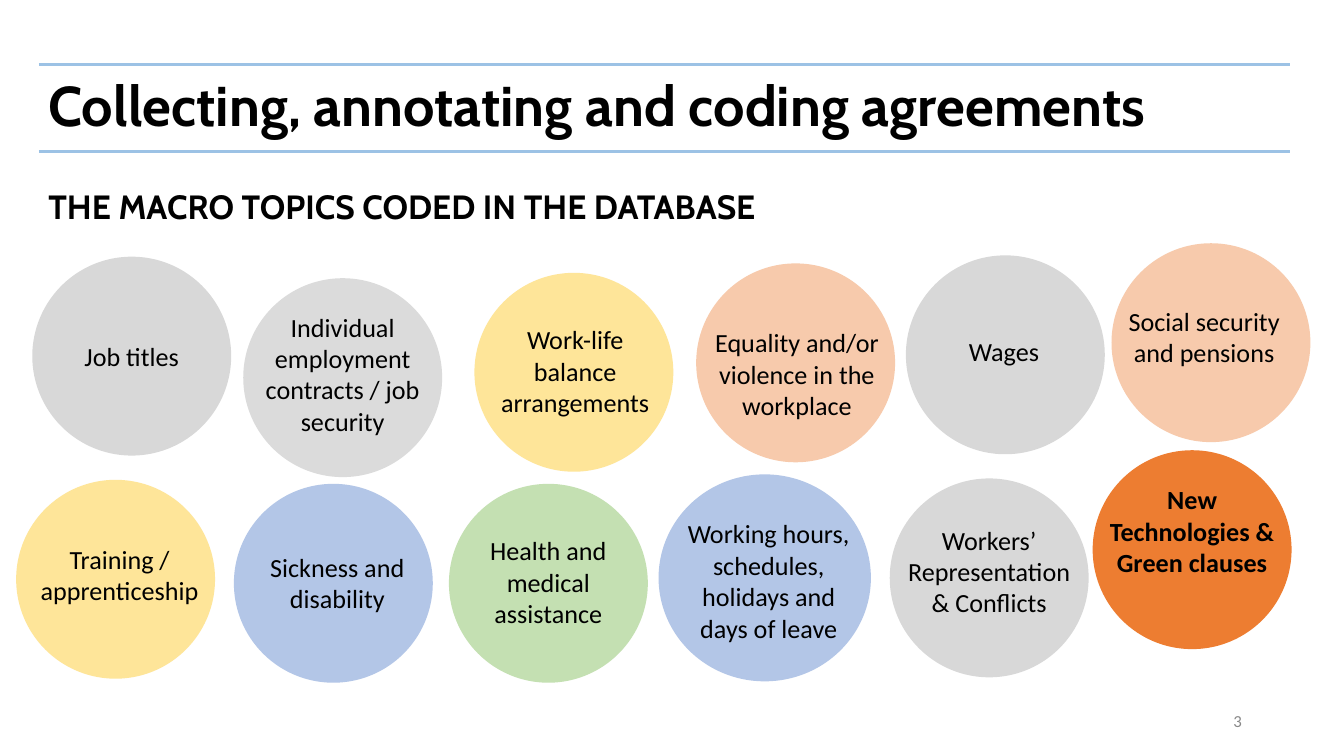
from dataclasses import dataclass

from lxml import etree
from pptx import Presentation
from pptx.dml.color import RGBColor
from pptx.enum.shapes import MSO_CONNECTOR, MSO_SHAPE
from pptx.enum.text import MSO_ANCHOR, MSO_AUTO_SIZE, PP_ALIGN
from pptx.oxml.ns import qn
from pptx.util import Inches, Pt

ELLIPSE = MSO_SHAPE.OVAL
STRAIGHT = MSO_CONNECTOR.STRAIGHT
MIDDLE, TOP = MSO_ANCHOR.MIDDLE, MSO_ANCHOR.TOP
CENTER, RIGHT, LEFT = PP_ALIGN.CENTER, PP_ALIGN.RIGHT, PP_ALIGN.LEFT
FIT_SHAPE, NO_FIT = MSO_AUTO_SIZE.SHAPE_TO_FIT_TEXT, MSO_AUTO_SIZE.NONE

COLORS = {
    "text": "000000",
    "number": "888888",
    "rule": "9CC2E5",
    "gray": "D8D8D8",
    "light gray": "DBDBDB",
    "yellow": "FEE599",
    "peach": "F7CAAC",
    "blue": "B3C6E7",
    "green": "C4E0B2",
    "orange": "ED7D31",
}
MARGIN, CONTENT_WIDTH = 0.29, 9.31
DIAMETER = 1.48
HANGING_INDENT = Inches(0.42)


@dataclass
class Topic:
    """A circle with its label box; without a label box the circle holds the text."""
    text: str
    color: str
    circle: tuple
    label: tuple = None  # left, top, height
    size: tuple = (DIAMETER, DIAMETER)
    bold: bool = False


TOPICS = [
    Topic("Social security and pensions", "peach", (8.27, 1.81), (8.22, 2.24, 0.53)),
    Topic("Training / apprenticeship", "yellow", (0.12, 3.57), (0.15, 4, 0.55)),
    Topic("Individual employment contracts / job security", "light gray",
          (1.81, 2.07), (1.81, 2.29, 0.98)),
    Topic("Sickness and disability", "blue", (1.74, 3.6), (1.77, 4.07, 0.53)),
    Topic("Health and medical assistance", "green", (3.34, 3.6), (3.34, 3.95, 0.76)),
    Topic("Work-life balance arrangements", "yellow", (3.53, 2.03), (3.54, 2.38, 0.76)),
    Topic("Equality and/or violence in the workplace", "peach",
          (5.18, 1.96), (5.19, 2.4, 0.76)),
    Topic("Wages", "gray", (6.74, 1.9), (6.73, 2.46, 0.3)),
    Topic("Working hours, schedules, holidays and days of leave", "blue",
          (4.9, 3.53), (4.98, 3.83, 0.98), size=(1.58, 1.54)),
    Topic("Workers’ Representation & Conflicts", "gray", (6.62, 3.56), (6.62, 3.87, 0.76)),
    Topic("New Technologies & Green clauses", "orange",
          (8.13, 3.35), (8.13, 3.56, 0.78), bold=True),
    Topic("Job titles", "gray", (0.24, 1.91)),
]


def rgb(name):
    return RGBColor.from_string(COLORS[name])


def write(shape, text, size, font="Calibri", color="text", bold=False,
          align=CENTER, anchor=MIDDLE, fit=NO_FIT):
    frame = shape.text_frame
    frame.word_wrap = True
    frame.auto_size = fit
    frame.vertical_anchor = anchor
    frame.margin_left = frame.margin_right = Inches(0.07)
    frame.margin_top = frame.margin_bottom = Inches(0.04)
    paragraph = frame.paragraphs[0]
    paragraph.text = text
    paragraph.alignment = align
    paragraph.font.name = font
    paragraph.font.size = Pt(size)
    paragraph.font.bold = bold
    paragraph.font.color.rgb = rgb(color)
    return paragraph


def place(shape, left, top, width, height):
    shape.left, shape.top = Inches(left), Inches(top)
    shape.width, shape.height = Inches(width), Inches(height)


def add_headings(page):
    title = page.shapes.title
    place(title, MARGIN, 0.26, CONTENT_WIDTH, 1.09)
    heading = write(title, "Collecting, annotating and coding agreements", 30,
                    font="Cabin", bold=True, align=LEFT)
    heading.line_spacing = 0.9

    body = page.placeholders[1]
    place(body, MARGIN, 1.34, CONTENT_WIDTH, 0.37)
    subtitle = write(body, "THE MACRO TOPICS CODED IN THE DATABASE", 18,
                     font="Cabin", bold=True, align=LEFT, anchor=TOP)
    subtitle.space_before = Pt(0)
    properties = subtitle._p.get_or_add_pPr()
    properties.set("marL", str(HANGING_INDENT))
    properties.set("indent", str(-HANGING_INDENT))
    bullet = etree.Element(qn("a:buNone"))
    properties.find(qn("a:spcBef")).addnext(bullet)


def add_rule(page, top):
    rule = page.shapes.add_connector(STRAIGHT, Inches(MARGIN), Inches(top),
                                     Inches(MARGIN + CONTENT_WIDTH), Inches(top))
    rule.line.color.rgb = rgb("rule")
    rule.line.width = Pt(1.5)
    etree.SubElement(rule._element.spPr, qn("a:effectLst"))


def add_text_box(page, left, top, width, height):
    return page.shapes.add_textbox(Inches(left), Inches(top), Inches(width), Inches(height))


def add_topic(page, topic):
    circle = page.shapes.add_shape(
        ELLIPSE, *(Inches(value) for value in topic.circle + topic.size))
    circle.shadow.inherit = False
    circle.fill.solid()
    circle.fill.fore_color.rgb = rgb(topic.color)
    circle.line.fill.background()
    if topic.label is None:
        write(circle, topic.text, 14, bold=topic.bold)
    else:
        left, top, height = topic.label
        label = add_text_box(page, left, top, DIAMETER, height)
        write(label, topic.text, 14, bold=topic.bold, fit=FIT_SHAPE)


def main():
    deck = Presentation()
    deck.slide_width = Inches(10)
    deck.slide_height = deck.slide_width * 9 // 16
    page = deck.slides.add_slide(deck.slide_layouts[1])
    add_headings(page)
    number = add_text_box(page, 7.06, 5.21, 2.25, 0.3)
    write(number, "3", 9, color="number", align=RIGHT)
    for top in (0.48, 1.13):
        add_rule(page, top)
    for topic in TOPICS:
        add_topic(page, topic)
    deck.save("out.pptx")


if __name__ == "__main__":
    main()
